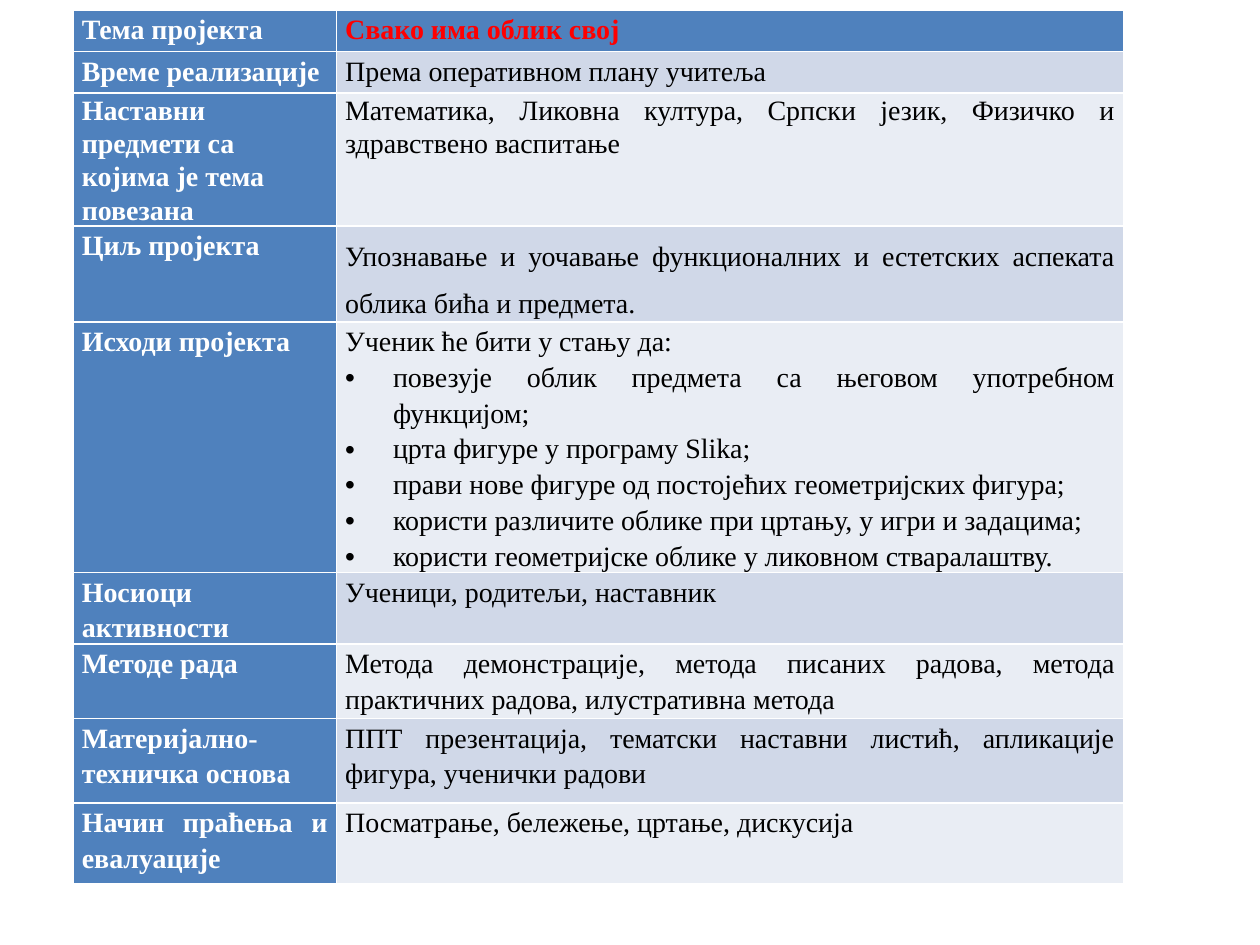
from lxml import etree
from pptx import Presentation
from pptx.dml.color import RGBColor
from pptx.enum.text import PP_ALIGN
from pptx.oxml.ns import qn
from pptx.util import Inches, Pt

COLORS = {"blue": "4F81BD", "dark": "D0D8E8", "light": "E9EDF4",
          "white": "FFFFFF", "black": "000000", "red": "FF0000"}
FONT = {"name": "Times New Roman", "size": Pt(16)}
MARGINS = {"margin_left": Inches(0.07), "margin_right": Inches(0.07),
           "margin_top": 0, "margin_bottom": 0}
COL_WIDTHS = [2.09, 6.25]
LEFT_ALIGNED = ("Наставни предмети са којима је тема повезана",
                "Материјално-техничка основа")

ROWS = [
    (0.33, 1.15, "Тема пројекта", ["Свако има облик свој"]),
    (0.33, 1.15, "Време реализације", ["Према оперативном плану учитеља"]),
    (1.05, 1.07, "Наставни предмети са којима је тема повезана",
     ["Математика, Ликовна култура, Српски језик, Физичко и здравствено васпитање"]),
    (0.76, 1.5, "Циљ пројекта",
     ["Упознавање и уочавање функционалних и естетских аспеката облика бића и предмета."]),
    (1.98, 1.15, "Исходи пројекта",
     ["Ученик ће бити у стању да:",
      "повезује облик предмета са његовом употребном функцијом;",
      "црта фигуре у програму Slika;",
      "прави нове фигуре од постојећих геометријских фигура;",
      "користи различите облике при цртању, у игри и задацима;",
      "користи геометријске облике у ликовном стваралаштву."]),
    (0.57, 1.15, "Носиоци активности", ["Ученици, родитељи, наставник"]),
    (0.59, 1.15, "Методе рада",
     ["Метода демонстрације, метода писаних радова, метода практичних радова, "
      "илустративна метода"]),
    (0.67, 1.15, "Материјално-техничка основа",
     ["ППТ презентација, тематски наставни листић, апликације фигура, ученички радови"]),
    (0.64, 1.15, "Начин праћења и евалуације",
     ["Посматрање, бележење, цртање, дискусија"]),
]


def rgb(name):
    return RGBColor.from_string(COLORS[name])


def set_attrs(obj, values):
    for key, value in values.items():
        setattr(obj, key, value)


def add_bullet(p):
    pPr = p._p.get_or_add_pPr()
    pPr.set("marL", str(Inches(0.38)))
    pPr.set("indent", str(Inches(-0.38)))
    etree.SubElement(pPr, qn("a:buFont")).set("typeface", "Arial")
    etree.SubElement(pPr, qn("a:buChar")).set("char", "•")


def fill_cell(cell, lines, fill, color, bold, spacing):
    set_attrs(cell, MARGINS)
    cell.fill.solid()
    cell.fill.fore_color.rgb = rgb(fill)
    tf = cell.text_frame
    for i, line in enumerate(lines):
        p = tf.add_paragraph() if i else tf.paragraphs[0]
        p.alignment = PP_ALIGN.LEFT if line in LEFT_ALIGNED else PP_ALIGN.JUSTIFY
        p.line_spacing = spacing
        if i:
            add_bullet(p)
        r = p.add_run()
        r.text = line
        set_attrs(r.font, {**FONT, "bold": bold})
        r.font.color.rgb = rgb(color)


def add_project_table(slide, left, top, width, height):
    table = slide.shapes.add_table(len(ROWS), len(COL_WIDTHS),
                                   left, top, width, height).table
    table.first_col = True
    for col, col_width in zip(table.columns, COL_WIDTHS):
        col.width = Inches(col_width)
    for i, (row_height, spacing, label, lines) in enumerate(ROWS):
        table.rows[i].height = Inches(row_height)
        label_spacing = min(spacing, 1.15)
        fill_cell(table.cell(i, 0), [label], "blue", "white", True, label_spacing)
        header = i == 0
        fill = "blue" if header else "dark" if i % 2 else "light"
        fill_cell(table.cell(i, 1), lines, fill,
                  "red" if header else "black", header, spacing)


def main():
    prs = Presentation()
    set_attrs(prs, {"slide_width": Inches(10), "slide_height": Inches(7.5)})
    slide = prs.slides.add_slide(prs.slide_layouts[6])
    add_project_table(slide, Inches(0.58), Inches(0.08), Inches(sum(COL_WIDTHS)),
                      Inches(sum(row[0] for row in ROWS)))
    prs.save("out.pptx")


if __name__ == "__main__":
    main()
